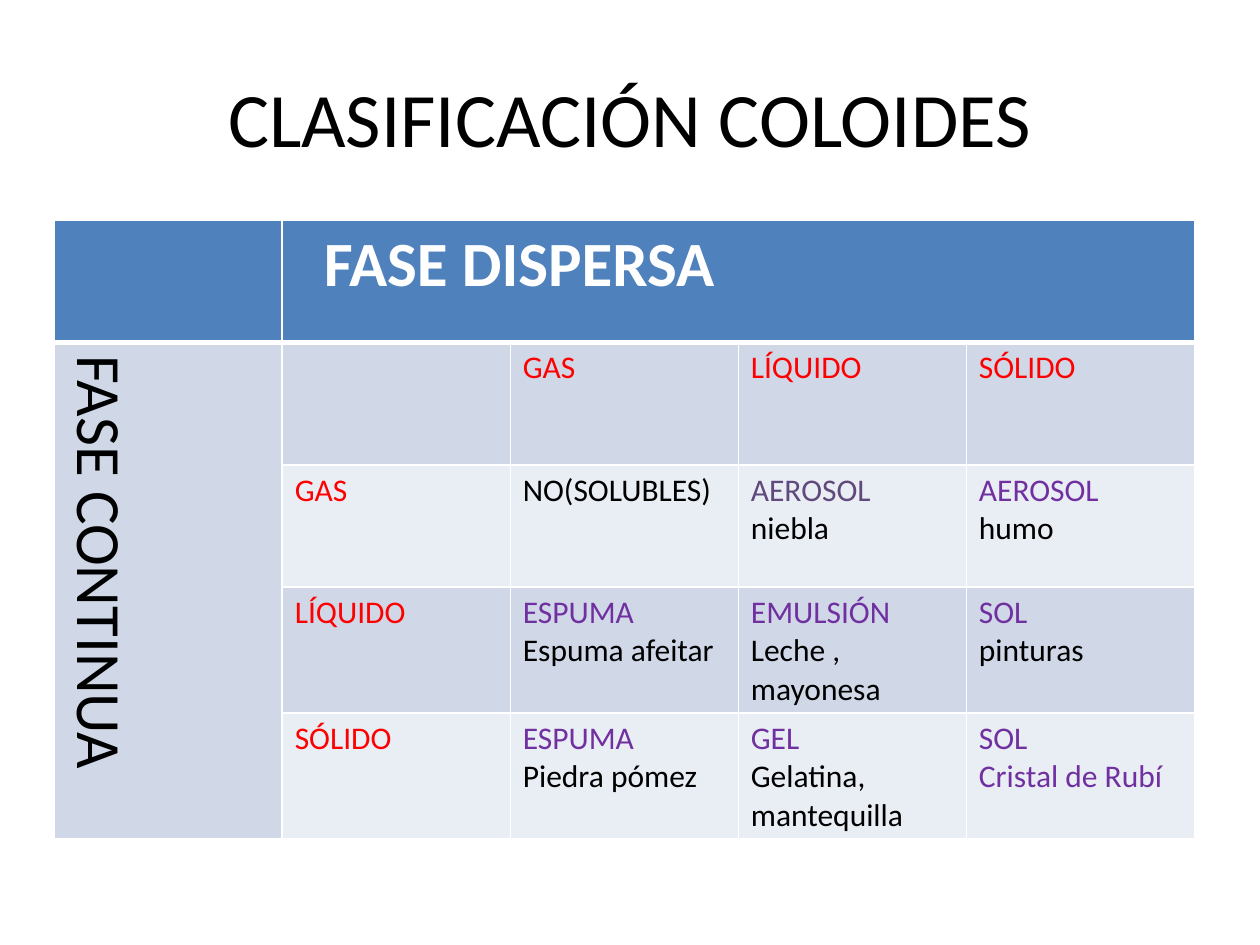
import pptx
import pptx.util
import pptx.dml.color
import pptx.enum.text
import pptx.oxml.ns
from lxml import etree

# Content: each cell is a list of (text, ink) lines
TITLE = "CLASIFICACIÓN COLOIDES"
TOP = "FASE DISPERSA"
SIDE = "FASE CONTINUA"
BODY = [
    [[], [("GAS", "red")], [("LÍQUIDO", "red")], [("SÓLIDO", "red")]],
    [[("GAS", "red")],
     [("NO(SOLUBLES)", "black")],
     [("AEROSOL", "plum"), ("niebla", "black")],
     [("AEROSOL", "purple"), ("humo", "black")]],
    [[("LÍQUIDO", "red")],
     [("ESPUMA", "purple"), ("Espuma afeitar", "black")],
     [("EMULSIÓN", "purple"), ("Leche , mayonesa", "black")],
     [("SOL", "purple"), ("pinturas", "black")]],
    [[("SÓLIDO", "red")],
     [("ESPUMA", "purple"), ("Piedra pómez", "black")],
     [("GEL", "purple"), ("Gelatina, mantequilla", "black")],
     [("SOL", "purple"), ("Cristal de Rubí", "purple")]],
]
COLORS = {"black": "000000", "white": "FFFFFF", "red": "FF0000",
          "purple": "7030A0", "plum": "604A7B", "head": "4F81BD",
          "dark": "D0D8E8", "light": "E9EDF4"}
FONT = "Calibri"
WIDE, HIGH = 10, 7.5
ROWS, COLS = len(BODY) + 1, len(BODY[0]) + 1
LEFT, UPPER, COL, ROW = 0.43, 1.75, 1.81, 0.97

inch = pptx.util.Inches


def color(name):
    return pptx.dml.color.RGBColor.from_string(COLORS[name])


def write(frame, lines, size, bold=False):
    for i, (text, ink) in enumerate(lines):
        para = frame.add_paragraph() if i else frame.paragraphs[0]
        run = para.add_run()
        run.text = text
        run.font.name = FONT
        run.font.size = pptx.util.Pt(size)
        run.font.bold = bold
        run.font.color.rgb = color(ink)


def border(cell, widths):
    props = cell._tc.get_or_add_tcPr()
    for side, width in zip("LRTB", widths):
        line = etree.SubElement(props, pptx.oxml.ns.qn("a:ln" + side),
                                w=str(pptx.util.Pt(width)))
        fill = etree.SubElement(line, pptx.oxml.ns.qn("a:solidFill"))
        etree.SubElement(fill, pptx.oxml.ns.qn("a:srgbClr"), val=COLORS["white"])


deck = pptx.Presentation()
deck.slide_width, deck.slide_height = inch(WIDE), inch(HIGH)
slide = deck.slides.add_slide(deck.slide_layouts[6])

# Title
box = slide.shapes.add_textbox(inch(WIDE * 0.05), inch(HIGH * 0.04),
                               inch(WIDE * 0.9), inch(1.25))
frame = box.text_frame
frame.word_wrap = True
frame.vertical_anchor = pptx.enum.text.MSO_ANCHOR.MIDDLE
write(frame, [(TITLE, "black")], 44)
frame.paragraphs[0].alignment = pptx.enum.text.PP_ALIGN.CENTER

# Table grid, with a thick rule under the header
table = slide.shapes.add_table(ROWS, COLS, inch(LEFT), inch(UPPER),
                               inch(COL * COLS), inch(ROW * ROWS)).table
for col in table.columns:
    col.width = inch(COL)
for r in range(ROWS):
    table.rows[r].height = inch(ROW)
    for c in range(COLS):
        cell = table.cell(r, c)
        border(cell, (1, 1, 3 if r == 1 else 1, 3 if r == 0 else 1))
        cell.fill.solid()
        band = "head" if r == 0 else "dark" if r % 2 else "light"
        cell.fill.fore_color.rgb = color(band)

# Merged headings
head = table.cell(0, 1)
head.merge(table.cell(0, COLS - 1))
head.margin_left = inch(0.33)
write(head.text_frame, [(TOP, "white")], 36, True)

side = table.cell(1, 0)
side.merge(table.cell(ROWS - 1, 0))
side._tc.get_or_add_tcPr().set("vert", "vert")
write(side.text_frame, [(SIDE, "black")], 36)

# Body cells
for r, row in enumerate(BODY, 1):
    for c, lines in enumerate(row, 1):
        write(table.cell(r, c).text_frame, lines, 18)

deck.save("out.pptx")
